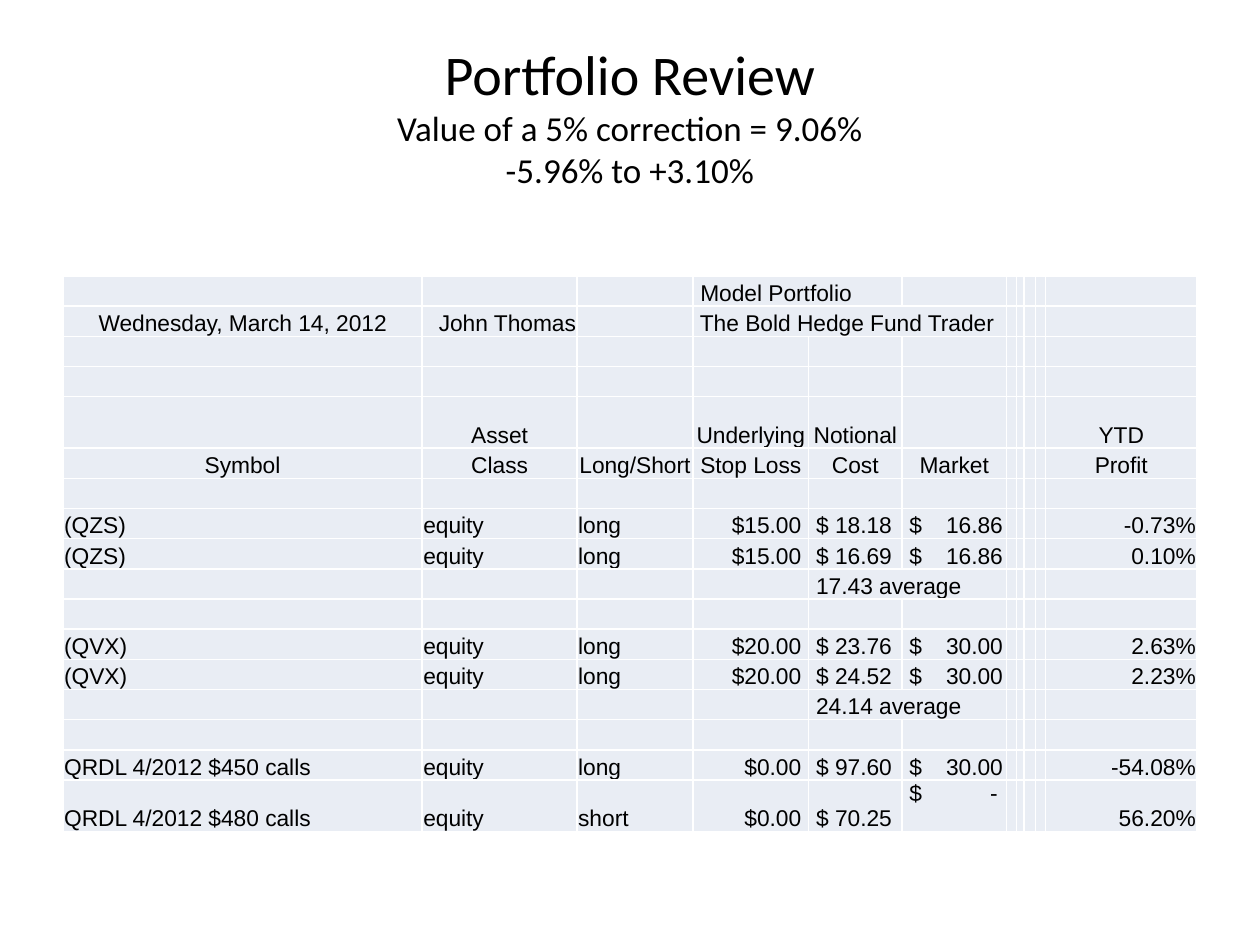
import pptx
import pptx.dml.color
import pptx.enum.text
import pptx.oxml
import pptx.oxml.ns
import pptx.util
from lxml import etree

Pt = pptx.util.Pt
ALIGN = pptx.enum.text.PP_ALIGN
ANCHOR = pptx.enum.text.MSO_ANCHOR
BLACK = pptx.dml.color.RGBColor(0x00, 0x00, 0x00)
WHITE = pptx.dml.color.RGBColor(0xFF, 0xFF, 0xFF)
PALE_BLUE = pptx.dml.color.RGBColor(0xE9, 0xED, 0xF4)

COLUMN_WIDTHS = [205.2, 88.5, 66.2, 66.2, 53.3, 59.8, 5.8, 4.3, 6.5, 5.8, 86.4]
ROW_HEIGHT, TALL_ROW_HEIGHT = 17.24, 29.5
SYMBOL, ASSET, SIDE, STOP, COST, MARKET, PROFIT = 0, 1, 2, 3, 4, 5, 10
FIELDS = (SYMBOL, ASSET, SIDE, STOP, COST, MARKET, PROFIT)
ROW_COUNT = 17

# Row number -> (symbol, asset class, side, stop loss, cost, market, profit)
HEADINGS = {
    4: ("", "Asset", "", "Underlying", "Notional", "", "YTD"),
    5: ("Symbol", "Class", "Long/Short", "Stop Loss", "Cost", "Market", "Profit"),
}
POSITIONS = {
    7: ("(QZS)", "equity", "long", "$15.00 ", " $ 18.18", " $\t16.86", "-0.73%"),
    8: ("(QZS)", "equity", "long", "$15.00 ", " $ 16.69", " $\t16.86", "0.10%"),
    11: ("(QVX)", "equity", "long", "$20.00 ", " $ 23.76", " $\t30.00", "2.63%"),
    12: ("(QVX)", "equity", "long", "$20.00 ", " $ 24.52", " $\t30.00", "2.23%"),
    15: ("QRDL 4/2012 $450 calls", "equity", "long", "$0.00 ", " $ 97.60",
         " $\t30.00", "-54.08%"),
    16: ("QRDL 4/2012 $480 calls", "equity", "short", "$0.00 ", " $ 70.25",
         " $\t-", "56.20%"),
}
# (row, first column, last column, text)
SPANS = [
    (0, STOP, COST, " Model Portfolio"),
    (1, STOP, MARKET, " The Bold Hedge Fund Trader"),
    (9, COST, MARKET, " 17.43 average"),
    (13, COST, MARKET, " 24.14 average"),
]


class ReviewSlide:
    title_font = "Calibri"
    table_font = "Arial"
    table_size = 13

    def __init__(self, presentation):
        self.slide = presentation.slides.add_slide(presentation.slide_layouts[6])

    def style(self, run, font, size):
        run.font.name = font
        run.font.size = Pt(size)
        run.font.color.rgb = BLACK

    def title(self, lines, sizes, left, top, width, height):
        frame = self.slide.shapes.add_textbox(
            Pt(left), Pt(top), Pt(width), Pt(height)).text_frame
        frame.word_wrap = True
        frame.vertical_anchor = ANCHOR.MIDDLE
        frame.margin_bottom = Pt(28)
        heading = frame.paragraphs[0]
        heading.text = "\v".join(lines)
        heading.alignment = ALIGN.CENTER
        for run, size in zip(heading.runs, sizes):
            self.style(run, self.title_font, size)

    def table(self, left, top, widths, heights):
        """Add an empty, filled and ruled grid and return its table."""
        grid = self.slide.shapes.add_table(
            len(heights), len(widths), Pt(left), Pt(top),
            Pt(sum(widths)), Pt(sum(heights))).table
        grid.first_row = grid.horz_banding = False
        for column, width in zip(grid.columns, widths):
            column.width = Pt(width)
        for row, height in zip(grid.rows, heights):
            row.height = Pt(height)
        for cell in grid.iter_cells():
            self.blank_cell(cell)
        return grid

    def blank_cell(self, cell):
        cell.margin_left = cell.margin_right = cell.margin_top = Pt(0.7)
        cell.margin_bottom = Pt(0)
        cell.vertical_anchor = ANCHOR.BOTTOM
        properties = cell._tc.get_or_add_tcPr()
        for side in "LRTB":
            properties.append(pptx.oxml.parse_xml(
                f'<a:ln{side} {pptx.oxml.ns.nsdecls("a")} w="12700"><a:solidFill>'
                f'<a:srgbClr val="{WHITE}"/></a:solidFill></a:ln{side}>'))
        cell.fill.solid()
        cell.fill.fore_color.rgb = PALE_BLUE
        # Keeps empty cells from growing to the default text size
        etree.SubElement(cell.text_frame.paragraphs[0]._p,
                         pptx.oxml.ns.qn("a:endParaRPr"),
                         sz=str(self.table_size * 100))

    def entry(self, cell, text, alignment=ALIGN.LEFT, tab=None):
        """Fill a cell; tab is the place of a right-aligned tab stop."""
        if not text:
            return
        content = cell.text_frame.paragraphs[0]
        content.text = text
        if tab:
            stops = etree.SubElement(content._p.get_or_add_pPr(),
                                     pptx.oxml.ns.qn("a:tabLst"))
            etree.SubElement(stops, pptx.oxml.ns.qn("a:tab"),
                             pos=str(Pt(tab)), algn="r")
        content.alignment = alignment
        for run in content.runs:
            self.style(run, self.table_font, self.table_size)


def main():
    presentation = pptx.Presentation()
    presentation.slide_width, presentation.slide_height = Pt(720), Pt(540)
    review = ReviewSlide(presentation)
    review.title(["Portfolio Review", "Value of a 5% correction = 9.06%",
                  "-5.96% to +3.10%"], [32, 20, 20], 36, 18, 648, 120)

    heights = [TALL_ROW_HEIGHT if row in (4, 16) else ROW_HEIGHT
               for row in range(ROW_COUNT)]
    portfolio = review.table(36, 157.7, COLUMN_WIDTHS, heights)

    for row, first, last, text in SPANS:
        portfolio.cell(row, first).merge(portfolio.cell(row, last))
        review.entry(portfolio.cell(row, first), text)
    review.entry(portfolio.cell(1, SYMBOL), "Wednesday, March 14, 2012", ALIGN.CENTER)
    review.entry(portfolio.cell(1, ASSET), "John Thomas", ALIGN.RIGHT)

    for row, labels in HEADINGS.items():
        for column, label in zip(FIELDS, labels):
            review.entry(portfolio.cell(row, column), label, ALIGN.CENTER)
    for row, values in POSITIONS.items():
        for column, value in zip(FIELDS, values):
            alignment = ALIGN.RIGHT if column in (STOP, PROFIT) else ALIGN.LEFT
            tab = None
            if column == MARKET:
                tab = 54 if value.endswith("-") else 57
            review.entry(portfolio.cell(row, column), value, alignment, tab)
    portfolio.cell(16, MARKET).vertical_anchor = ANCHOR.TOP

    presentation.save("out.pptx")


if __name__ == "__main__":
    main()
